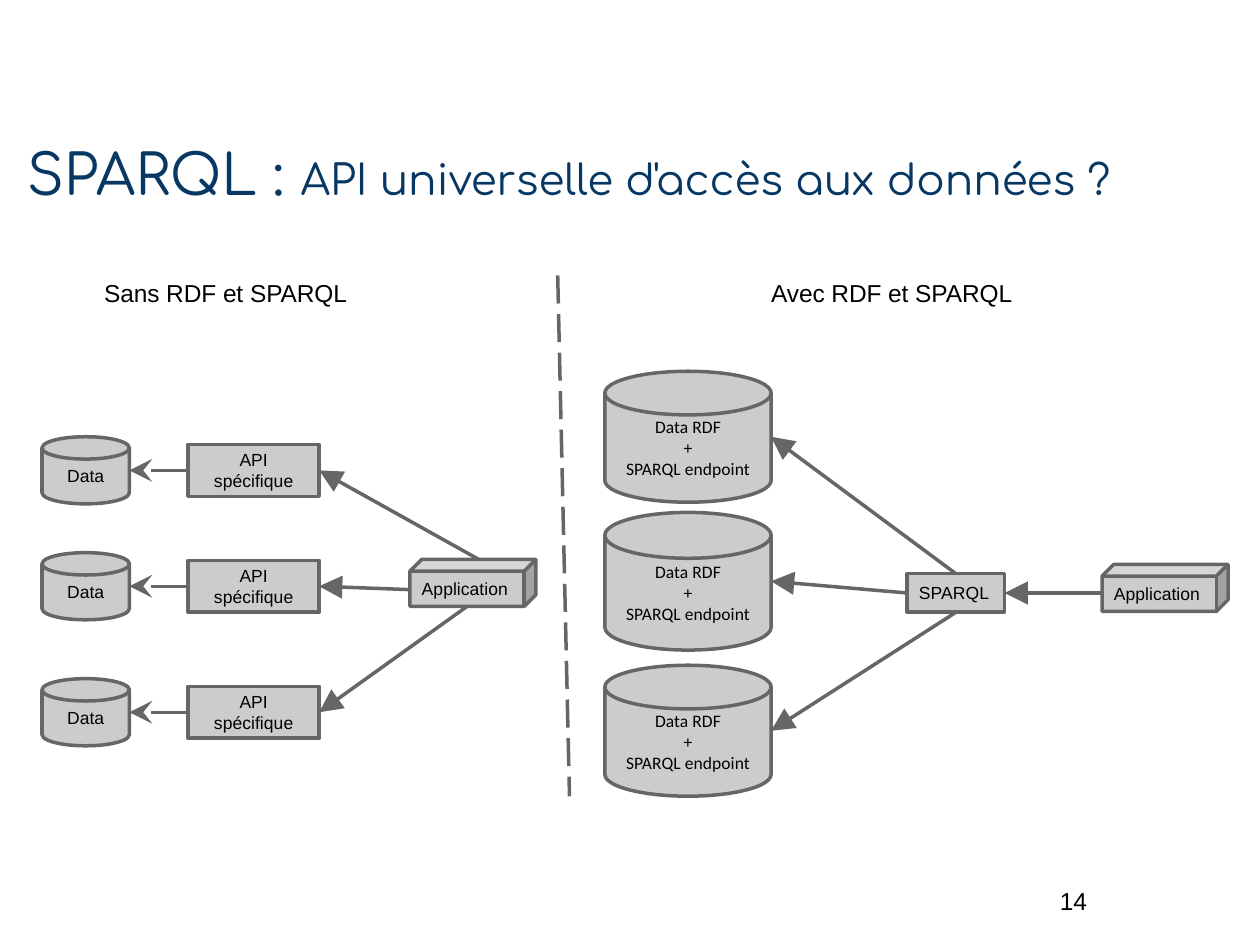
import pptx
import pptx.util
import pptx.dml.color
import pptx.enum.dml
import pptx.enum.shapes
import pptx.enum.text
import pptx.oxml
import pptx.oxml.ns

Inch = pptx.util.Inches
Pt = pptx.util.Pt
Kind = pptx.enum.shapes.MSO_SHAPE
Align = pptx.enum.text.PP_ALIGN
Anchor = pptx.enum.text.MSO_ANCHOR
name = pptx.oxml.ns.qn
GREY = pptx.dml.color.RGBColor(0xCC, 0xCC, 0xCC)
DARK = pptx.dml.color.RGBColor(0x66, 0x66, 0x66)
BLACK = pptx.dml.color.RGBColor(0, 0, 0)
NAVY = pptx.dml.color.RGBColor(0x07, 0x37, 0x63)
WIDE = 7.5
PAD = 0.07

deck = pptx.Presentation()
deck.slide_width, deck.slide_height = Inch(WIDE), Inch(WIDE * 3 / 4)
slide = deck.slides.add_slide(deck.slide_layouts[5])


def block(kind, left, mid, width, height, lines, size=7.5, face="Arial",
          align=Align.CENTER, anchor=Anchor.MIDDLE, pad=PAD):
    """Add a shape, or a text box if kind is None, centred on height mid."""
    box = [Inch(v) for v in (left, mid - height / 2, width, height)]
    if kind is None:
        item = slide.shapes.add_textbox(*box)
    else:
        item = slide.shapes.add_shape(kind, *box)
        item.shadow.inherit = False
        item.fill.solid()
        item.fill.fore_color.rgb = GREY
        item.line.color.rgb = DARK
        item.line.width = Pt(1.5)
    frame = item.text_frame
    frame.word_wrap = True
    frame.vertical_anchor = anchor
    frame.margin_left = frame.margin_right = Inch(pad)
    frame.margin_top = frame.margin_bottom = Inch(pad)
    for n, line in enumerate(lines):
        para = frame.add_paragraph() if n else frame.paragraphs[0]
        para.alignment = align
        run = para.add_run()
        run.text = line
        run.font.size, run.font.name = Pt(size), face
        run.font.color.rgb = BLACK
    return item


def link(start, end, head=None):
    """Draw a line; each end is a point or a (shape, side) pair."""
    ends = [(0, 0) if hasattr(e[0], "shape_id") else e for e in (start, end)]
    line = slide.shapes.add_connector(
        pptx.enum.shapes.MSO_CONNECTOR.STRAIGHT,
        *[Inch(v) for point in ends for v in point])
    if hasattr(start[0], "shape_id"):
        line.begin_connect(*start)
    if hasattr(end[0], "shape_id"):
        line.end_connect(*end)
    line.line.color.rgb = DARK
    line.line.width = Pt(1.5)
    props = line.element.spPr
    if head:
        look = {"type": head, "w": "lg", "len": "lg"}
        props.find(name("a:ln")).append(props.makeelement(name("a:tailEnd"), look))
    props.append(props.makeelement(name("a:effectLst"), {}))
    return line


# Title
title = slide.shapes.title
title.left, title.top = Inch(0.09), Inch(0.83)
title.width, title.height = Inch(6.75), Inch(0.4)
frame = title.text_frame
frame.word_wrap = True
frame.auto_size = pptx.enum.text.MSO_AUTO_SIZE.NONE
frame.vertical_anchor = Anchor.MIDDLE
frame.margin_left = frame.margin_right = Inch(PAD)
frame.margin_top = frame.margin_bottom = Inch(PAD)
frame.paragraphs[0].alignment = Align.LEFT
for text, size in (("SPARQL : ", 24), ("API universelle d'accès aux données ?", 18)):
    run = frame.paragraphs[0].add_run()
    run.text = text
    run.font.size, run.font.name = Pt(size), "Comfortaa"
    run.font.color.rgb = NAVY

# Headings and divider
for left, text in ((0.55, "Sans RDF et SPARQL"), (4.52, "Avec RDF et SPARQL")):
    block(None, left, 1.77, 1.77, 0.37, [text], 10.5,
          align=Align.LEFT, anchor=Anchor.TOP)
rule = link((3.32, 1.64), (3.39, 4.74))
rule.line.dash_style = pptx.enum.dml.MSO_LINE.LONG_DASH

# Applications, one on each side
for left, mid in ((2.44, 3.47), (6.56, 3.5)):
    block(Kind.CUBE, left, mid, 0.75, 0.28, ["Application"],
          align=Align.LEFT).adjustments[0] = 0.25

# Without: one specific API for each data store
for mid, start in ((2.8, (2.85, 3.33)), (3.49, (2.44, 3.51)), (4.24, (2.78, 3.61))):
    block(Kind.FLOWCHART_MAGNETIC_DISK, 0.25, mid, 0.52, 0.4, ["Data"])
    api = block(Kind.RECTANGLE, 1.12, mid, 0.78, 0.31, ["API", "spécifique"])
    link((api, 1), (0.77, mid), "stealth")
    link(start, (api, 3), "triangle")

# With: one SPARQL access for every endpoint
hub = block(Kind.RECTANGLE, 5.4, 3.53, 0.58, 0.23, ["SPARQL"], align=Align.LEFT)
for mid, height, side in ((2.6, 0.78, 0), (3.46, 0.82, 1), (4.35, 0.78, 2)):
    block(Kind.FLOWCHART_MAGNETIC_DISK, 3.6, mid, 0.99, height,
          ["Data RDF", "+", "SPARQL endpoint"], face="Calibri")
    link((hub, side), (4.59, mid), "triangle")
link((6.56, 3.53), (hub, 3), "triangle")

# Page number
block(None, 6.21, 5.36, 0.45, 0.43, ["14"], 10.5, align=Align.LEFT, pad=0.1)

deck.save("out.pptx")
